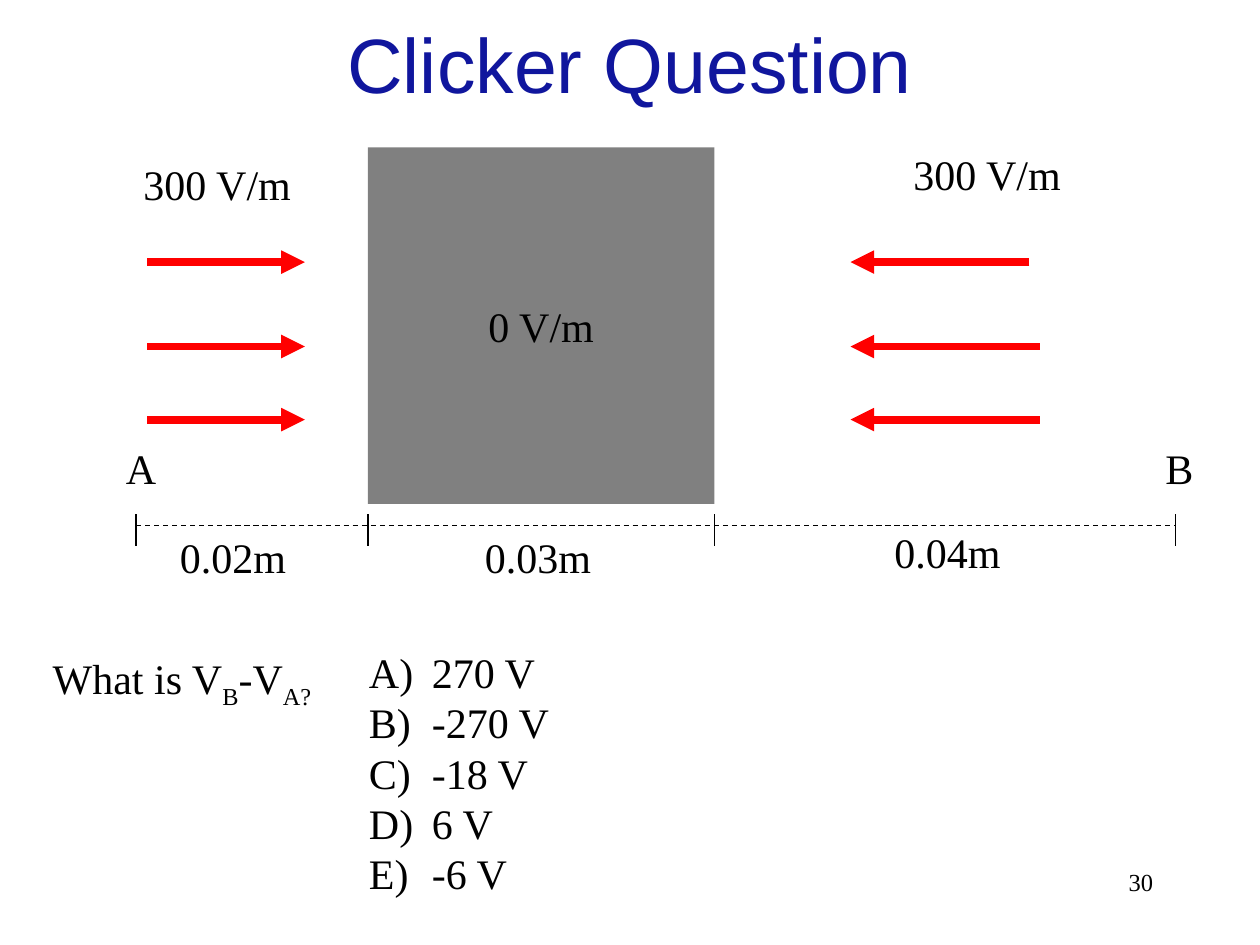
from dataclasses import dataclass

from lxml.etree import SubElement
from pptx import Presentation
from pptx.dml.color import RGBColor
from pptx.enum.dml import MSO_LINE_DASH_STYLE as Dash
from pptx.enum.shapes import MSO_CONNECTOR_TYPE as Connector, MSO_SHAPE as Shape
from pptx.enum.text import MSO_ANCHOR as Anchor, PP_ALIGN as Align
from pptx.oxml.ns import qn
from pptx.util import Inches, Pt


@dataclass(frozen=True)
class Theme:
    title_font: str = "Arial"
    body_font: str = "Times New Roman"
    title_size: int = 44
    body_size: int = 24
    number_size: int = 14
    title_color: RGBColor = RGBColor(0x10, 0x16, 0x9D)
    ink: RGBColor = RGBColor(0, 0, 0)
    field: RGBColor = RGBColor(0xFF, 0, 0)
    conductor: RGBColor = RGBColor(0x80, 0x80, 0x80)
    thin: float = 0.75
    thick: float = 4.5


class SlideBuilder:
    def __init__(self, slide, theme):
        self.shapes = slide.shapes
        self.theme = theme

    def style(self, run, font=None, size=None, color=None):
        run.font.name = font or self.theme.body_font
        run.font.size = Pt(size or self.theme.body_size)
        run.font.color.rgb = color or self.theme.ink

    def text(self, box, words, wrap=False, align=Align.LEFT,
             anchor=Anchor.TOP, **style):
        left, top, width, height = map(Inches, box)
        frame = self.shapes.add_textbox(left, top, width, height).text_frame
        frame.word_wrap = wrap
        frame.vertical_anchor = anchor
        frame.text = words
        for paragraph in frame.paragraphs:
            paragraph.alignment = align
            for run in paragraph.runs:
                self.style(run, **style)
        return frame

    def subscripted(self, box, parts):
        paragraph = self.text(box, "").paragraphs[0]
        for words, is_subscript in parts:
            run = paragraph.add_run()
            run.text = words
            self.style(run)
            if is_subscript:
                run.font._element.set("baseline", "-25000")

    def lettered_list(self, box, items):
        for paragraph in self.text(box, "\n".join(items)).paragraphs:
            properties = paragraph._p.get_or_add_pPr()
            properties.set("marL", str(Inches(0.5)))
            properties.set("indent", str(Inches(-0.5)))
            SubElement(properties, qn("a:buAutoNum"), type="alphaUcParenR")

    def block(self, box, words, fill):
        left, top, width, height = map(Inches, box)
        block = self.shapes.add_shape(Shape.RECTANGLE, left, top, width, height)
        block.shadow.inherit = False
        block.fill.solid()
        block.fill.fore_color.rgb = fill
        block.line.fill.background()
        frame = block.text_frame
        frame.word_wrap = False
        frame.vertical_anchor = Anchor.MIDDLE
        frame.text = words
        frame.paragraphs[0].alignment = Align.CENTER
        self.style(frame.paragraphs[0].runs[0])

    def line(self, start, end, color=None, width=None, dash=None):
        line = self.shapes.add_connector(
            Connector.STRAIGHT, *map(Inches, (*start, *end)))
        line.line.color.rgb = color or self.theme.ink
        line.line.width = Pt(width or self.theme.thin)
        if dash:
            line.line.dash_style = dash
        SubElement(line._element.spPr, qn("a:effectLst"))
        return line

    def arrow(self, start, end):
        arrow = self.line(start, end, self.theme.field, self.theme.thick)
        outline = arrow._element.spPr.find(qn("a:ln"))
        SubElement(outline, qn("a:tailEnd"), type="triangle")


def main():
    deck = Presentation()
    deck.slide_width, deck.slide_height = Inches(10), Inches(7.5)
    theme = Theme()
    page = SlideBuilder(deck.slides.add_slide(deck.slide_layouts[6]), theme)

    # Title
    page.text((0, 0, 10, 1), "Clicker Question", wrap=True, align=Align.CENTER,
              anchor=Anchor.MIDDLE, font=theme.title_font,
              size=theme.title_size, color=theme.title_color)

    # Distance scale with a tick at each boundary
    boundaries = (1.08, 2.92, 5.67, 9.33)
    page.line((boundaries[0], 4.17), (boundaries[-1], 4.17), dash=Dash.DASH)
    for x in boundaries:
        page.line((x, 4.08), (x, 4.33))
    for left, top, distance in ((1.33, 4.17, "0.02m"), (3.75, 4.17, "0.03m"),
                                (7, 4.13, "0.04m")):
        page.text((left, top, 1.04, 0.5), distance)

    # End points
    page.text((0.9, 3.46, 0.44, 0.5), "A")
    page.text((9.15, 3.46, 0.42, 0.5), "B")

    # Conductor between the two field regions
    conductor_left, conductor_right = boundaries[1:3]
    page.block((conductor_left, 1.17, conductor_right - conductor_left, 2.83),
               "0 V/m", theme.conductor)

    # Field arrows pointing at the conductor from both sides
    for y, right_start in ((2.08, 8.17), (2.75, 8.25), (3.33, 8.25)):
        page.arrow((1.17, y), (2.42, y))
        page.arrow((right_start, y), (6.75, y))
    for left, top in ((1.04, 1.21), (7.15, 1.13)):
        page.text((left, top, 1.38, 0.5), "300 V/m")

    # Question and answers
    page.subscripted((0.32, 5.13, 2.31, 0.5),
                     (("What is V", False), ("B", True),
                      ("-V", False), ("A?", True)))
    page.lettered_list((2.83, 5.08, 1.64, 2.1),
                       ("270 V", "-270 V", "-18 V", "6 V", "-6 V"))

    # Slide number
    page.text((7.17, 6.83, 2.08, 0.5), "30", wrap=True, align=Align.RIGHT,
              size=theme.number_size)

    deck.save("out.pptx")


if __name__ == "__main__":
    main()
